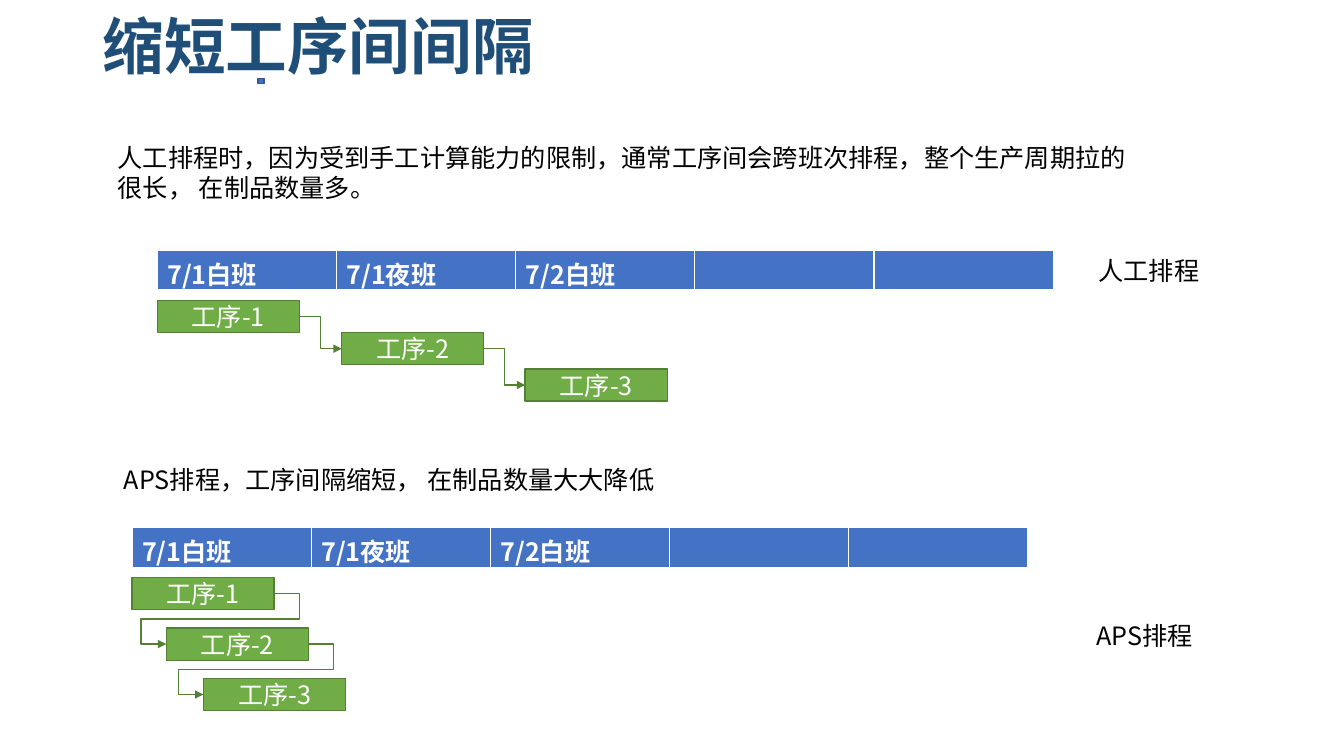
from lxml import etree
from pptx import Presentation
from pptx.dml.color import RGBColor
from pptx.enum.shapes import MSO_CONNECTOR, MSO_SHAPE
from pptx.enum.text import MSO_ANCHOR, MSO_AUTO_SIZE, PP_ALIGN
from pptx.oxml.ns import qn
from pptx.util import Pt

RECTANGLE = MSO_SHAPE.RECTANGLE
ELBOW = MSO_CONNECTOR.ELBOW
TOP, MIDDLE = MSO_ANCHOR.TOP, MSO_ANCHOR.MIDDLE
LEFT, CENTER = PP_ALIGN.LEFT, PP_ALIGN.CENTER
GROW = MSO_AUTO_SIZE.SHAPE_TO_FIT_TEXT

FONT = "Noto Sans CJK SC"
COLORS = {
    "title": "1F4E79", "text": "000000", "white": "FFFFFF",
    "blue": "4472C4", "blue_line": "325491",
    "green": "70AD47", "green_line": "538035",
}
TITLE = "缩短工序间间隔"
TEXTS = [
    ("人工排程时，因为受到手工计算能力的限制，通常工序间会跨班次排程，整个生产周期拉的很长， 在制品数量多。",
     (77, 97.9, 739.4, 51.1)),
    ("人工排程", (777.6, 178.6, 101.5, 29)),
    ("APS排程，工序间隔缩短， 在制品数量大大降低", (81.4, 328.3, 735, 29)),
    ("APS排程", (776.2, 439.2, 112.3, 29)),
]
SHIFTS = ["7/1白班", "7/1夜班", "7/2白班", "", ""]
STEPS = ["工序-1", "工序-2", "工序-3"]
SCHEDULES = [
    {"table": (112.3, 178.6), "steps": [(112.3, 214.6), (244.1, 237.6), (375.1, 263.5)]},
    {"table": (94.3, 376.6), "steps": [(94.3, 412.6), (118.8, 448.6), (145.4, 484.6)]},
]
SHIFT_WIDTH, SHIFT_HEIGHT = 128, 29.5
STEP_WIDTH, STEP_HEIGHT = 101.5, 23
ELBOW_STUB = 18
BORDERS = {"lnL": 1, "lnR": 1, "lnT": 1, "lnB": 3}


def color(name):
    return RGBColor.from_string(COLORS[name])


def points(values):
    return [Pt(value) for value in values]


def write(frame, text, color_name, size=18, bold=False, align=LEFT):
    paragraph = frame.paragraphs[0]
    paragraph.alignment = align
    run = paragraph.add_run()
    run.text = text
    font = run.font
    font.size, font.bold, font.name = Pt(size), bold, FONT
    font.color.rgb = color(color_name)
    etree.SubElement(run._r.get_or_add_rPr(), qn("a:ea")).set("typeface", FONT)
    return paragraph


def add_text(slide, text, box, anchor=TOP):
    frame = slide.shapes.add_textbox(*points(box)).text_frame
    frame.word_wrap = True
    frame.vertical_anchor = anchor
    return frame


def add_rectangle(slide, box, fill, line):
    shape = slide.shapes.add_shape(RECTANGLE, *points(box))
    shape.shadow.inherit = False
    shape.fill.solid()
    shape.fill.fore_color.rgb = color(fill)
    shape.line.color.rgb = color(line)
    shape.line.width = Pt(1)
    return shape


def add_step(slide, text, position):
    shape = add_rectangle(slide, (*position, STEP_WIDTH, STEP_HEIGHT), "green", "green_line")
    shape.text_frame.vertical_anchor = MIDDLE
    shape.text_frame.word_wrap = True
    write(shape.text_frame, text, "white", align=CENTER)
    return shape


def add_shift_table(slide, position):
    box = (*position, SHIFT_WIDTH * len(SHIFTS), SHIFT_HEIGHT)
    table = slide.shapes.add_table(1, len(SHIFTS), *points(box)).table
    for column, text in enumerate(SHIFTS):
        table.columns[column].width = Pt(SHIFT_WIDTH)
        cell = table.cell(0, column)
        if text:
            write(cell.text_frame, text, "white", bold=True)
        properties = cell._tc.get_or_add_tcPr()
        for side, width in BORDERS.items():
            border = etree.SubElement(properties, qn("a:" + side), w=str(Pt(width)))
            fill = etree.SubElement(border, qn("a:solidFill"))
            etree.SubElement(fill, qn("a:srgbClr"), val=COLORS["white"])
        cell.fill.solid()
        cell.fill.fore_color.rgb = color("blue")


def link_steps(slide, first, second):
    connector = slide.shapes.add_connector(ELBOW, 0, 0, 0, 0)
    connector.begin_connect(first, 3)
    connector.end_connect(second, 1)
    connector.line.color.rgb = color("green_line")
    connector.line.width = Pt(1)
    properties = connector._element.spPr
    etree.SubElement(connector.line._get_or_add_ln(), qn("a:tailEnd"), type="triangle")
    etree.SubElement(properties, qn("a:effectLst"))
    if connector.end_x < connector.begin_x:
        geometry = properties.find(qn("a:prstGeom"))
        geometry.set("prst", "bentConnector5")
        stub = round(Pt(ELBOW_STUB) / connector.width * 100000)
        guides = geometry.find(qn("a:avLst"))
        for number, value in enumerate((-stub, 50000, 100000 + stub), 1):
            etree.SubElement(guides, qn("a:gd"), name=f"adj{number}", fmla=f"val {value}")


def main():
    presentation = Presentation()
    presentation.slide_width, presentation.slide_height = Pt(960), Pt(540)
    slide = presentation.slides.add_slide(presentation.slide_layouts[6])

    title_frame = add_text(slide, TITLE, (66.2, 10.8, 828, 49), MIDDLE)
    write(title_frame, TITLE, "title", 44, True).line_spacing = 0.9
    add_rectangle(slide, (184.3, 56.2, 4.3, 3.6), "blue", "blue_line")

    for text, box in TEXTS:
        frame = add_text(slide, text, box)
        frame.auto_size = GROW
        write(frame, text, "text")

    for schedule in SCHEDULES:
        add_shift_table(slide, schedule["table"])
        steps = [add_step(slide, text, position)
                 for text, position in zip(STEPS, schedule["steps"])]
        for first, second in zip(steps, steps[1:]):
            link_steps(slide, first, second)

    presentation.save("out.pptx")


if __name__ == "__main__":
    main()
